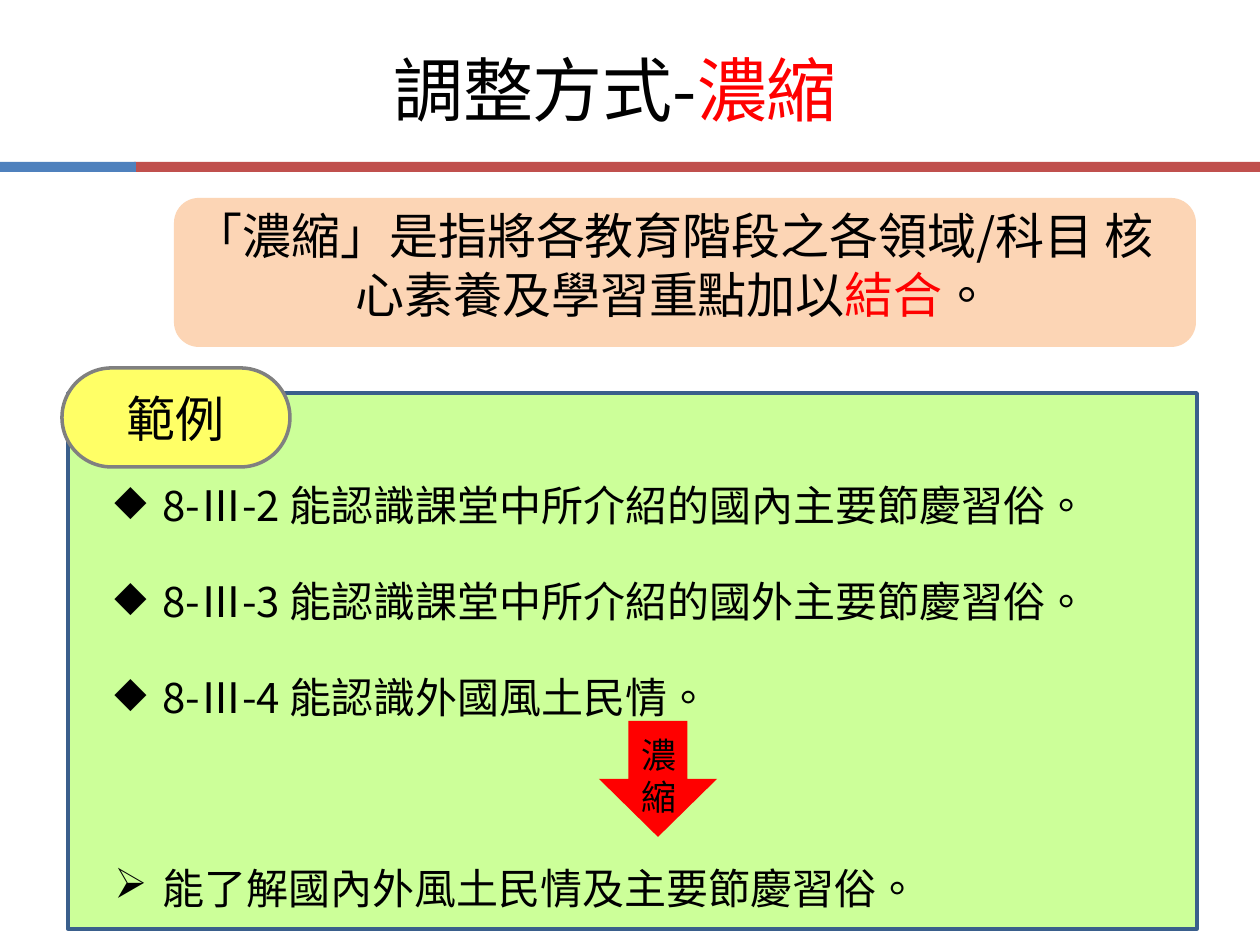
from dataclasses import dataclass

from lxml import etree
from pptx import Presentation
from pptx.dml.color import RGBColor
from pptx.enum.shapes import MSO_SHAPE
from pptx.enum.text import MSO_ANCHOR, PP_ALIGN
from pptx.oxml.ns import qn
from pptx.util import Emu, Pt

RECTANGLE = MSO_SHAPE.RECTANGLE
ROUNDED = MSO_SHAPE.ROUNDED_RECTANGLE
DOWN_ARROW = MSO_SHAPE.DOWN_ARROW
CENTER, LEFT = PP_ALIGN.CENTER, PP_ALIGN.LEFT
TOP, MIDDLE = MSO_ANCHOR.TOP, MSO_ANCHOR.MIDDLE

PX_PER_INCH = 126
FONT = "Noto Sans CJK SC"
COLORS = {
    "black": "000000", "red": "FF0000", "blue": "4F81BD", "brick": "C0504D",
    "peach": "FCD5B5", "green": "CCFF99", "navy": "3A5F8C",
    "yellow": "FFFF66", "gray": "808080",
}


@dataclass
class Box:
    left: int
    top: int
    width: int
    height: int


@dataclass
class Panel:
    box: Box
    kind: int
    fill: str
    line: str = ""
    rounding: float | None = None


@dataclass
class Words:
    text: str
    color: str = "black"


@dataclass
class Item:
    bullet: str
    text: str
    space_before: float


def px(length: int) -> Emu:
    return Emu(round(length * 914400 / PX_PER_INCH))


def color(name: str) -> RGBColor:
    return RGBColor.from_string(COLORS[name])


def place(box: Box) -> tuple:
    return px(box.left), px(box.top), px(box.width), px(box.height)


def draw_panel(shapes, panel: Panel):
    shape = shapes.add_shape(panel.kind, *place(panel.box))
    shape.shadow.inherit = False
    shape.fill.solid()
    shape.fill.fore_color.rgb = color(panel.fill)
    if panel.line:
        shape.line.color.rgb = color(panel.line)
        shape.line.width = Pt(2)
    else:
        shape.line.fill.background()
    if panel.rounding is not None:
        shape.adjustments[0] = panel.rounding
    return shape


def add_words(paragraph, words: Words, size: int) -> None:
    run = paragraph.add_run()
    run.text = words.text
    run.font.size = Pt(size)
    run.font.name = FONT
    run.font.color.rgb = color(words.color)
    properties = run._r.get_or_add_rPr()
    properties.set("lang", "zh-TW")
    east_asian = etree.Element(qn("a:ea"), typeface=FONT)
    properties.find(qn("a:latin")).addnext(east_asian)


def write(shape, parts: list[Words], size: int, align=CENTER, anchor=TOP) -> None:
    frame = shape.text_frame
    frame.word_wrap = True
    frame.vertical_anchor = anchor
    paragraph = frame.paragraphs[0]
    paragraph.alignment = align
    for words in parts:
        add_words(paragraph, words, size)


def write_list(shape, items: list[Item], size: int, indent: int) -> None:
    frame = shape.text_frame
    frame.word_wrap = True
    for index, item in enumerate(items):
        paragraph = frame.add_paragraph() if index else frame.paragraphs[0]
        properties = paragraph._p.get_or_add_pPr()
        properties.set("marL", str(px(indent)))
        properties.set("indent", str(-px(indent)))
        etree.SubElement(properties, qn("a:buChar"), char=item.bullet)
        paragraph.line_spacing = Pt(50)
        paragraph.space_before = Pt(item.space_before)
        add_words(paragraph, Words(item.text), size)


def main() -> None:
    presentation = Presentation()
    presentation.slide_width, presentation.slide_height = px(1260), px(945)
    slide = presentation.slides.add_slide(presentation.slide_layouts[6])
    shapes = slide.shapes

    # Title and two-colour rule
    draw_panel(shapes, Panel(Box(134, 162, 1131, 10), RECTANGLE, "brick"))
    draw_panel(shapes, Panel(Box(0, 162, 136, 10), RECTANGLE, "blue"))
    title = shapes.add_textbox(*place(Box(-15, 40, 1260, 97)))
    write(title, [Words("調整方式-"), Words("濃縮", "red")], 40)

    # Definition
    draw_panel(shapes, Panel(Box(174, 198, 1022, 149), ROUNDED, "peach"))
    definition = shapes.add_textbox(*place(Box(179, 199, 989, 131)))
    write(definition, [
        Words("「濃縮」是指將各教育階段之各領域/科目 核心素養及學習重點加以"),
        Words("結合", "red"),
        Words("。"),
    ], 28)

    # Example panel and its list
    draw_panel(shapes, Panel(Box(68, 393, 1129, 536), RECTANGLE, "green", "navy"))
    examples = shapes.add_textbox(*place(Box(102, 436, 1114, 493)))
    write_list(examples, [
        Item("◆", "8-Ⅲ-2 能認識課堂中所介紹的國內主要節慶習俗。", 0),
        Item("◆", "8-Ⅲ-3 能認識課堂中所介紹的國外主要節慶習俗。", 4.8),
        Item("◆", "8-Ⅲ-4 能認識外國風土民情。", 4.8),
        Item("➢", "能了解國內外風土民情及主要節慶習俗。", 59.6),
    ], 24, 48)

    # Example label
    label = draw_panel(
        shapes, Panel(Box(62, 368, 228, 99), ROUNDED, "yellow", "gray", 0.5))
    write(label, [Words("範例")], 28, anchor=MIDDLE)

    # Arrow with its caption
    group = shapes.add_group_shape()
    draw_panel(group.shapes, Panel(Box(599, 721, 118, 116), DOWN_ARROW, "red"))
    caption = group.shapes.add_textbox(*place(Box(629, 727, 44, 97)))
    write(caption, [Words("濃縮")], 20, LEFT)

    presentation.save("out.pptx")


if __name__ == "__main__":
    main()
